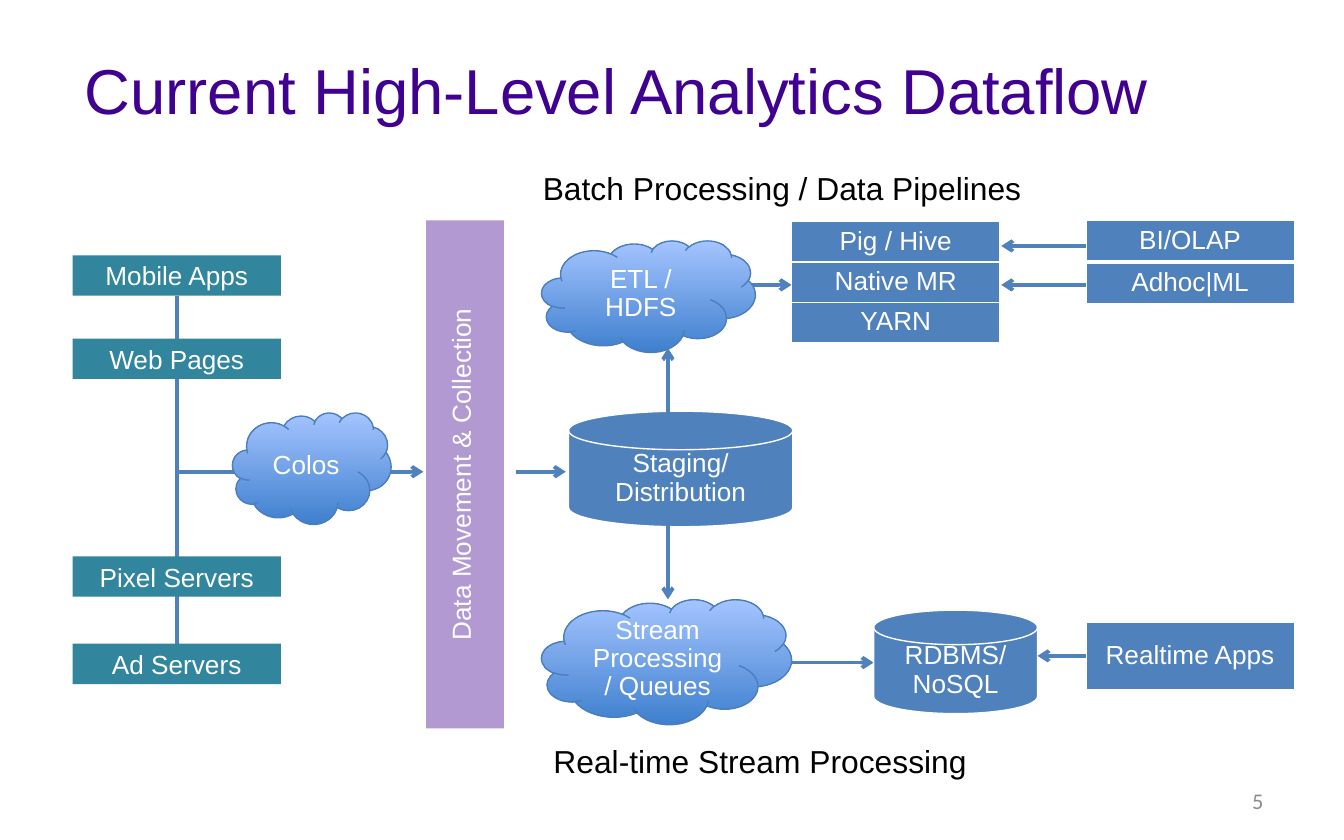
from lxml.etree import SubElement
from pptx import Presentation
from pptx.dml.color import RGBColor
from pptx.enum.shapes import MSO_CONNECTOR as Conn, MSO_SHAPE as Kind
from pptx.enum.text import MSO_ANCHOR as Anchor, PP_ALIGN as Align
from pptx.oxml.ns import qn
from pptx.util import Pt

PX = 9144
HUES = {
    "plum": "400090", "teal": "31859C", "blue": "4F81BD", "edge": "4B7EBC",
    "deep": "3F80CE", "pale": "A4C4FF", "white": "FFFFFF", "black": "000000",
    "gray": "8C8C8C",
}


def hue(name):
    return RGBColor.from_string(HUES[name])


def emu(*nums):
    return [round(n * PX) for n in nums]


def write(shape, text, size=14, color="white", align=Align.CENTER,
          anchor=Anchor.MIDDLE, space=None, wrap=True, face="Arial"):
    frame = shape.text_frame
    frame.text = text
    frame.word_wrap = wrap
    frame.vertical_anchor = anchor
    para = frame.paragraphs[0]
    para.alignment = align
    para.line_spacing = space
    font = para.runs[0].font
    font.size, font.name = Pt(size), face
    font.color.rgb = hue(color)


def label(slide, text, x, y, w, h, **style):
    box = slide.shapes.add_textbox(*emu(x, y, w, h))
    write(box, text, **style)
    return box


def node(slide, kind, x, y, w, h, fill="blue", line="white"):
    shape = slide.shapes.add_shape(kind, *emu(x, y, w, h))
    shape.shadow.inherit = False
    shape.fill.solid()
    shape.fill.fore_color.rgb = hue(fill)
    if line:
        shape.line.color.rgb = hue(line)
        shape.line.width = Pt(0.75)
    else:
        shape.line.fill.background()
    return shape


def block(slide, text, x, y, w, h, kind=Kind.RECTANGLE):
    shape = node(slide, kind, x, y, w, h)
    write(shape, text, space=0.9)
    return shape


def disk(slide, text, x, y, w, h):
    return block(slide, text, x, y, w, h, Kind.FLOWCHART_MAGNETIC_DISK)


def cloud(slide, text, x, y, w, h):
    shape = node(slide, Kind.CLOUD, x, y, w, h, line="edge")
    shape.fill.gradient()
    shape.fill.gradient_angle = 90
    for stop, name, spot in zip(shape.fill.gradient_stops, ("deep", "pale"), (0, 1)):
        stop.color.rgb = hue(name)
        stop.position = spot
    write(shape, text, space=0.9)


def link(slide, x1, y1, x2, y2, head=True):
    line = slide.shapes.add_connector(Conn.STRAIGHT, *emu(x1, y1, x2, y2))
    line.line.color.rgb = hue("blue")
    line.line.width = Pt(2)
    if head:
        SubElement(line.line._get_or_add_ln(), qn("a:tailEnd"), type="arrow")
    SubElement(line._element.spPr, qn("a:effectLst"))
    return line


def heading(slide, x, y, w, h):
    title = slide.shapes.title
    title.left, title.top, title.width, title.height = emu(x, y, w, h)
    write(title, "Current High-Level Analytics Dataflow", 34, "plum",
          Align.LEFT, Anchor.TOP)


def source(slide, x, y, w, h):
    mid = x + w // 2
    spine = link(slide, mid, y + 30, mid, y + h, head=False)
    link(slide, mid, y + 161, x + 151, y + 161)
    names = ["Mobile Apps", "Web Pages", "Pixel Servers", "Ad Servers"]
    boxes = []
    for name, top in zip(names, (0, 62, 224, 289)):
        box = node(slide, Kind.RECTANGLE, x, y + top, w, 30, "teal", None)
        write(box, name)
        boxes.append(box)
    spine.begin_connect(boxes[0], 2)
    spine.end_connect(boxes[-1], 0)
    link(slide, x + 225, y + 161, x + 261, y + 161)
    cloud(slide, "Colos", x + 119, y + 117, 118, 83)


def collect(slide, x, y, w, h):
    band = node(slide, Kind.RECTANGLE, x, y, w, h, "plum", None)
    tint = band._element.spPr.find(qn("a:solidFill"))[0]
    SubElement(tint, qn("a:alpha"), val="40000")
    text = label(slide, "Data Movement & Collection",
                 x + (w - h) / 2 - 3, y + h / 2 - 17, h, 34, anchor=Anchor.TOP)
    text.rotation = 270
    link(slide, x + w + 9, y + 187, x + w + 46, y + 187)


def stage(slide, x, y, w, h):
    disk(slide, "Staging/Distribution", x, y, w, h)
    link(slide, x + 74, y + 78, x + 74, y + 140)
    link(slide, x + 74, y + 1, x + 74, y - 47)


def note(slide, text, x, y, w, h):
    label(slide, text, x, y, w, h, size=17, color="black", align=Align.LEFT,
          anchor=Anchor.TOP, wrap=False)


def batch(slide, x, y, w, h):
    note(slide, "Batch Processing / Data Pipelines", x, y, 379, 39)
    link(slide, x + 159, y + 91, x + 195, y + 91)
    cloud(slide, "ETL / HDFS", x + 9, y + 58, 159, 83)
    for row, name in enumerate(["Pig / Hive", "Native MR", "YARN"]):
        block(slide, name, x + 195, y + 44 + 30 * row, 155, 30)
    for row, name in enumerate(["BI/OLAP", "Adhoc|ML"]):
        block(slide, name, x + w - 155, y + 43 + 32 * row, 155, 30)
        level = y + 62 + 29 * row
        link(slide, x + w - 155, level, x + 351, level)


def stream(slide, x, y, w, h):
    link(slide, x + 177, y + 47, x + 247, y + 47)
    cloud(slide, "Stream Processing / Queues", x, y, 186, 93)
    disk(slide, "RDBMS/ NoSQL", x + 247, y + 8, 122, 77)
    apps = block(slide, "Realtime Apps", x + w - 155, y + 17, 155, 50)
    feed = link(slide, x + w - 155, y + 42, x + 369, y + 42)
    feed.begin_connect(apps, 1)
    note(slide, "Real-time Stream Processing", x - 1, y + h - 39, 330, 39)


def main():
    deck = Presentation()
    deck.slide_width, deck.slide_height = emu(1000, 625)
    slide = deck.slides.add_slide(deck.slide_layouts[5])
    heading(slide, 53, 33, 940, 133)
    source(slide, 54, 190, 155, 320)
    collect(slide, 317, 164, 58, 378)
    stage(slide, 423, 306, 167, 86)
    batch(slide, 394, 121, 569, 141)
    stream(slide, 403, 446, 560, 140)
    label(slide, "5", 717, 579, 233, 33, size=12, color="gray",
          align=Align.RIGHT, face="Calibri")
    deck.save("out.pptx")


if __name__ == "__main__":
    main()
